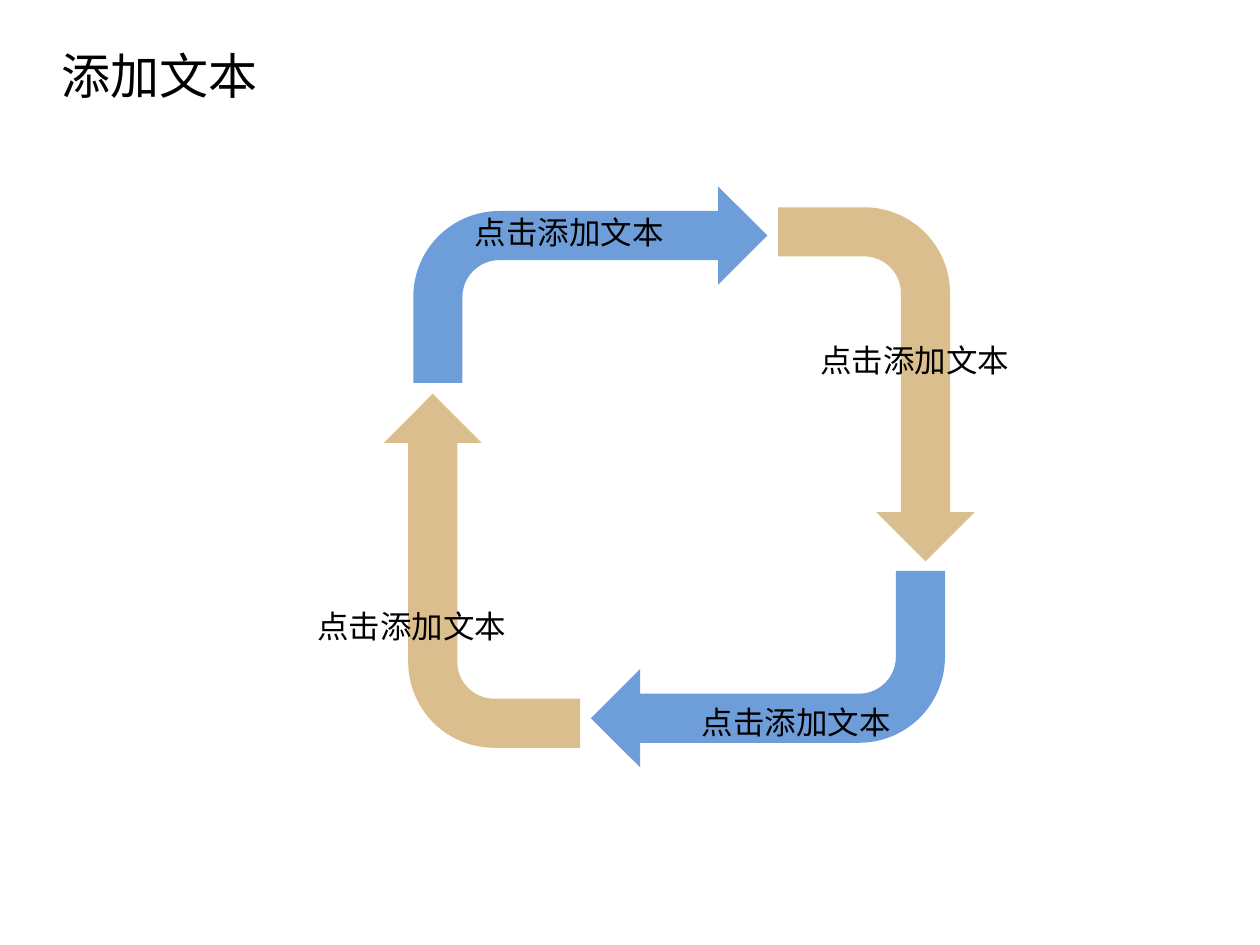
from pptx import Presentation
from pptx import util as u
from pptx.dml.color import RGBColor
from pptx.enum import shapes, text
from pptx.oxml.ns import qn
from lxml import etree

BLACK = RGBColor(0x00, 0x00, 0x00)
BLUE = RGBColor(0x6E, 0x9E, 0xDA)
TAN = RGBColor(0xDB, 0xBE, 0x8D)


class Deck:
    """Holds the style and the current slide."""
    font = "Noto Sans CJK SC"
    arrow_size = (2.81, 1.56)
    frame = {"word_wrap": False, "auto_size": text.MSO_AUTO_SIZE.SHAPE_TO_FIT_TEXT}

    def __init__(self, width, height):
        self.prs = Presentation()
        self.prs.slide_width, self.prs.slide_height = u.Inches(width), u.Inches(height)
        self.s = self.prs.slides.add_slide(self.prs.slide_layouts[6])

    def label(self, words, x, y, w, h, size):
        tf = self.s.shapes.add_textbox(*map(u.Inches, (x, y, w, h))).text_frame
        for name, value in self.frame.items():
            setattr(tf, name, value)
        r = tf.paragraphs[0].add_run()
        r.text = words
        for name, value in {"size": u.Pt(size), "name": self.font}.items():
            setattr(r.font, name, value)
        r.font.color.rgb = BLACK
        # East Asian typeface
        etree.SubElement(r.font._element, qn("a:ea"), typeface=self.font)

    def arrow(self, x, y, turn, color):
        sp = self.s.shapes.add_shape(
            shapes.MSO_SHAPE.BENT_ARROW, *map(u.Inches, (x, y, *self.arrow_size)))
        sp.rotation = turn
        sp.shadow.inherit = False
        sp.fill.solid()
        sp.fill.fore_color.rgb = color
        sp.line.fill.background()


def main():
    deck = Deck(10, 7.5)

    # Title
    deck.label("添加文本", 0.39, 0.31, 1.77, 0.57, 28)

    # Cycle of arrows, clockwise from the top left
    corners = [(3.28, 1.48), (5.55, 2.27), (4.69, 4.53), (2.42, 3.75)]
    for i, (x, y) in enumerate(corners):
        deck.arrow(x, y, 90 * i, (BLUE, TAN)[i % 2])

    # Arrow labels
    for x, y in [(2.42, 4.77), (5.47, 5.53), (3.67, 1.64), (6.41, 2.66)]:
        deck.label("点击添加文本", x, y, 1.72, 0.4, 18)

    deck.prs.save("out.pptx")


if __name__ == "__main__":
    main()
